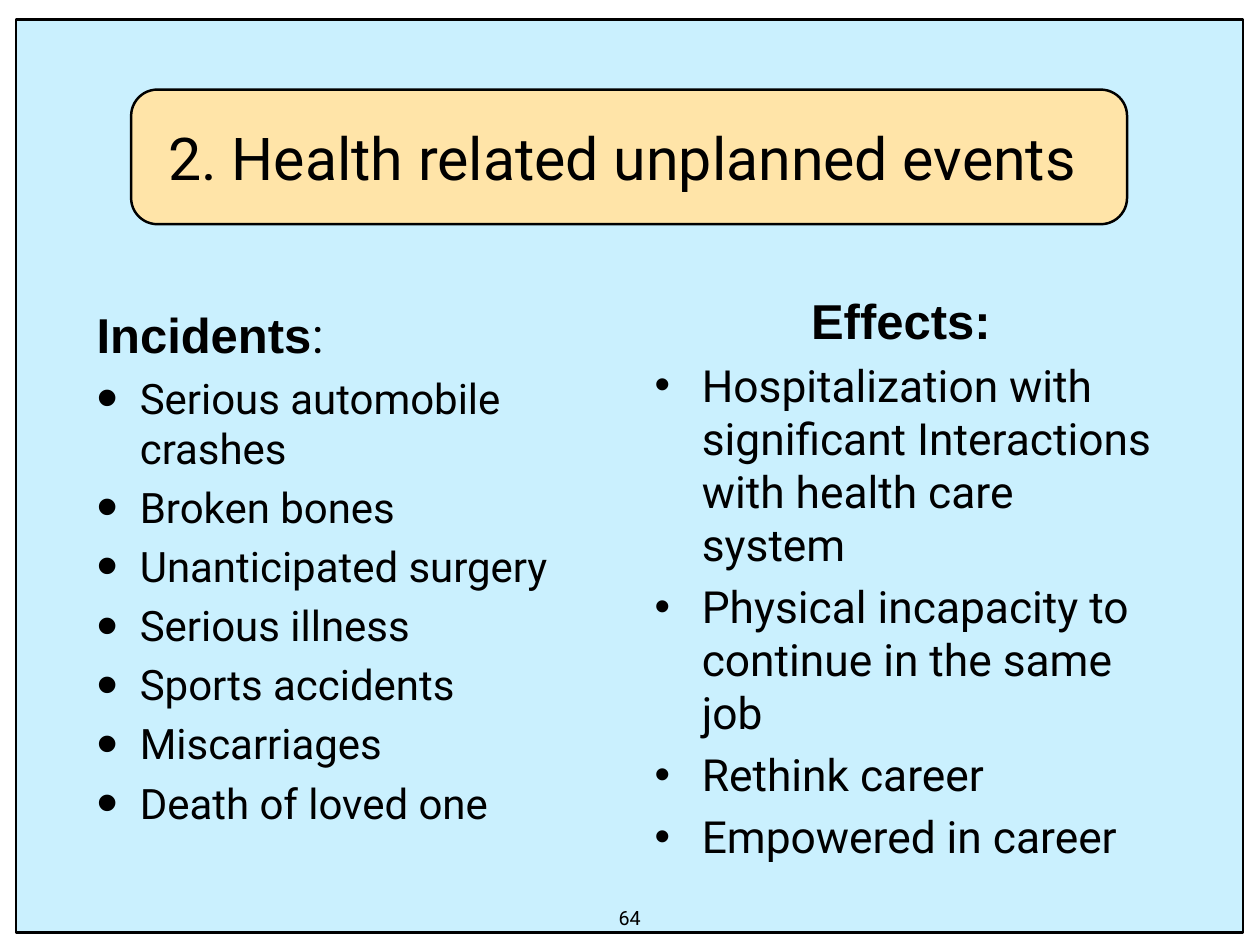
from lxml import etree
from pptx import Presentation
from pptx import util as u
from pptx.dml.color import RGBColor
from pptx.enum import shapes, text
from pptx.oxml.ns import qn

INK = "000000"
INCIDENTS = [
    "Serious automobile crashes",
    "Broken bones",
    "Unanticipated surgery",
    "Serious illness",
    "Sports accidents",
    "Miscarriages",
    "Death of loved one",
]
EFFECTS = [
    "Hospitalization with significant Interactions with health care system",
    "Physical incapacity to continue in the same job",
    "Rethink career",
    "Empowered in career",
]


def color(value):
    return RGBColor.from_string(value)


def set_font(font, size, name="Roboto", bold=False):
    font.size = u.Pt(size)
    font.name = name
    font.bold = bold
    font.color.rgb = color(INK)


def prepare_frame(frame, anchor, wrap=True):
    frame.margin_left = frame.margin_right = u.Cm(0.15)
    frame.margin_top = frame.margin_bottom = u.Cm(0.15)
    frame.vertical_anchor = anchor
    frame.word_wrap = wrap
    frame.auto_size = text.MSO_AUTO_SIZE.NONE


def add_panel(slide, kind, box, fill):
    shape = slide.shapes.add_shape(kind, *map(u.Cm, box))
    shape.shadow.inherit = False
    shape.fill.solid()
    shape.fill.fore_color.rgb = color(fill)
    shape.line.color.rgb = color(INK)
    shape.line.width = u.Pt(2)
    return shape


def add_heading(slide, box, wording):
    left, top, width, height = box
    banner_box = (left + 1.96, top + 0.33, width - 3.96, height - 0.66)
    banner = add_panel(slide, shapes.MSO_SHAPE.ROUNDED_RECTANGLE, banner_box, "FFE4A8")
    banner.adjustments[0] = 0.195
    title = slide.shapes.title
    banner._element.addnext(title._element)
    title.left, title.top, title.width, title.height = map(u.Cm, box)
    prepare_frame(title.text_frame, text.MSO_ANCHOR.MIDDLE)
    title.text_frame.text = wording
    paragraph = title.text_frame.paragraphs[0]
    paragraph.alignment = text.PP_ALIGN.CENTER
    set_font(paragraph.font, 48)


def set_indent(paragraph, indent, bullet_percent=None):
    properties = paragraph._p.get_or_add_pPr()
    properties.set("marL", str(u.Cm(indent)))
    properties.set("indent", str(-u.Cm(indent)))
    if bullet_percent:
        size = etree.SubElement(properties, qn("a:buSzPct"))
        size.set("val", str(bullet_percent * 1000))
        etree.SubElement(properties, qn("a:buFont")).set("typeface", "Arial")
        etree.SubElement(properties, qn("a:buChar")).set("char", "•")


def add_column(slide, box, heading, heading_tail, items, size, indent,
               bullet_percent, alignment, anchor):
    frame = slide.shapes.add_textbox(*map(u.Cm, box)).text_frame
    prepare_frame(frame, anchor)
    paragraph = frame.paragraphs[0]
    paragraph.alignment = alignment
    paragraph.space_before = u.Pt(8.5)
    set_indent(paragraph, indent)
    for wording, name, bold in ((heading, "Arial", True), (heading_tail, "Roboto", False)):
        if wording:
            run = paragraph.add_run()
            run.text = wording
            set_font(run.font, 39.8, name, bold)
    for item in items:
        paragraph = frame.add_paragraph()
        paragraph.text = item
        paragraph.space_before = u.Pt(7.1)
        set_indent(paragraph, indent, bullet_percent)
        set_font(paragraph.font, size)


def add_page_number(slide, box, number):
    frame = slide.shapes.add_textbox(*map(u.Cm, box)).text_frame
    prepare_frame(frame, text.MSO_ANCHOR.TOP, wrap=False)
    paragraph = frame.paragraphs[0]
    paragraph.text = number
    paragraph.alignment = text.PP_ALIGN.CENTER
    set_font(paragraph.font, 16)


def main():
    presentation = Presentation()
    presentation.slide_width = u.Cm(36.12)
    presentation.slide_height = u.Cm(27.1)
    slide = presentation.slides.add_slide(presentation.slide_layouts[5])
    add_panel(slide, shapes.MSO_SHAPE.RECTANGLE, (0.46, 0.56, 35.18, 26.19), "CAF0FE")
    add_heading(slide, (1.8, 2.24, 32.51, 4.52), "2. Health related unplanned events ")
    add_column(slide, (2.62, 8.13, 15.24, 16.21), "Incidents", ":", INCIDENTS, 34.1, 1.24,
               145, text.PP_ALIGN.LEFT, text.MSO_ANCHOR.MIDDLE)
    add_column(slide, (18.62, 8.18, 14.81, 16.87), "Effects: ", "", EFFECTS, 36, 1.35,
               100, text.PP_ALIGN.CENTER, text.MSO_ANCHOR.TOP)
    add_page_number(slide, (17.6, 25.83, 0.91, 0.97), "64")
    presentation.save("out.pptx")


if __name__ == "__main__":
    main()
